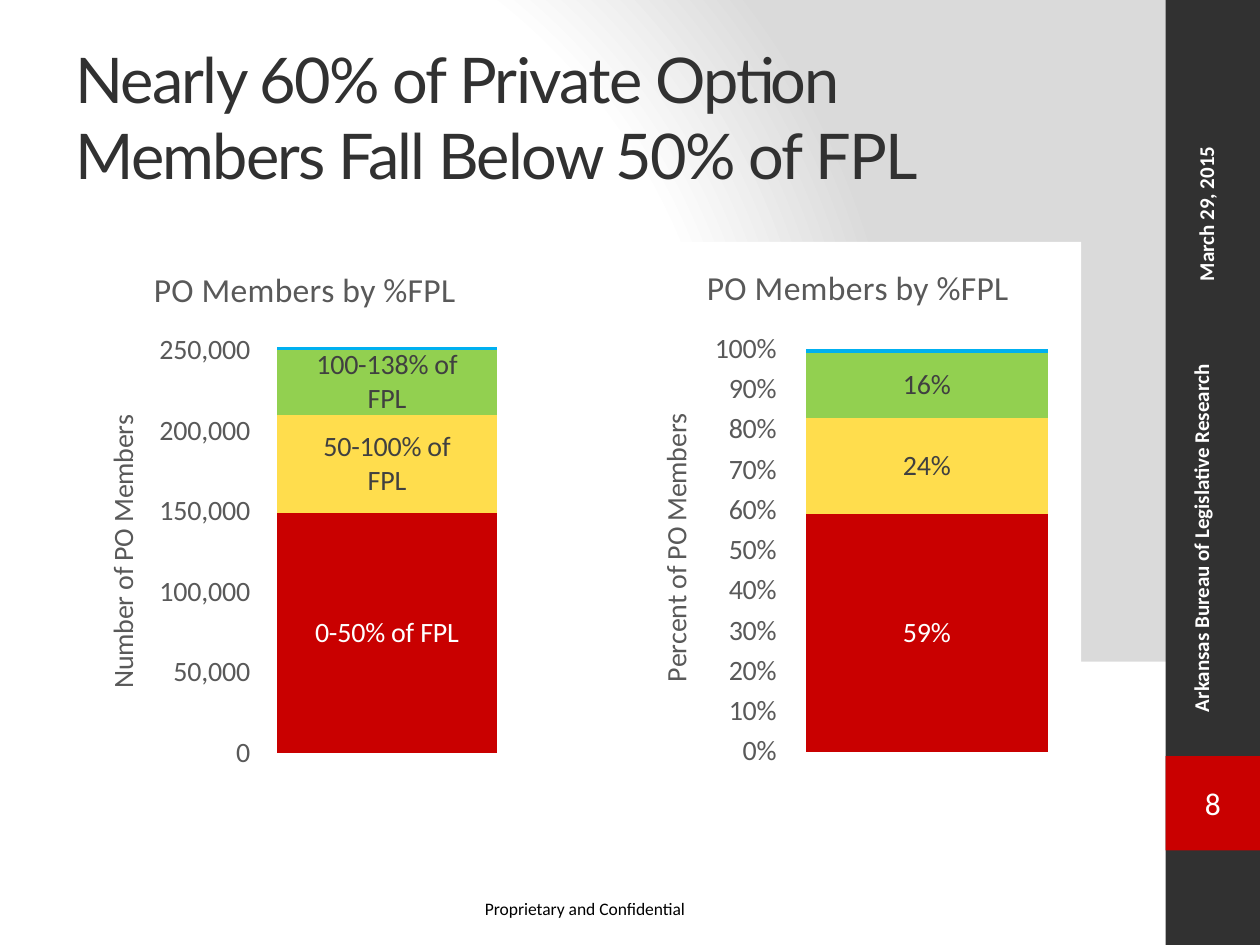
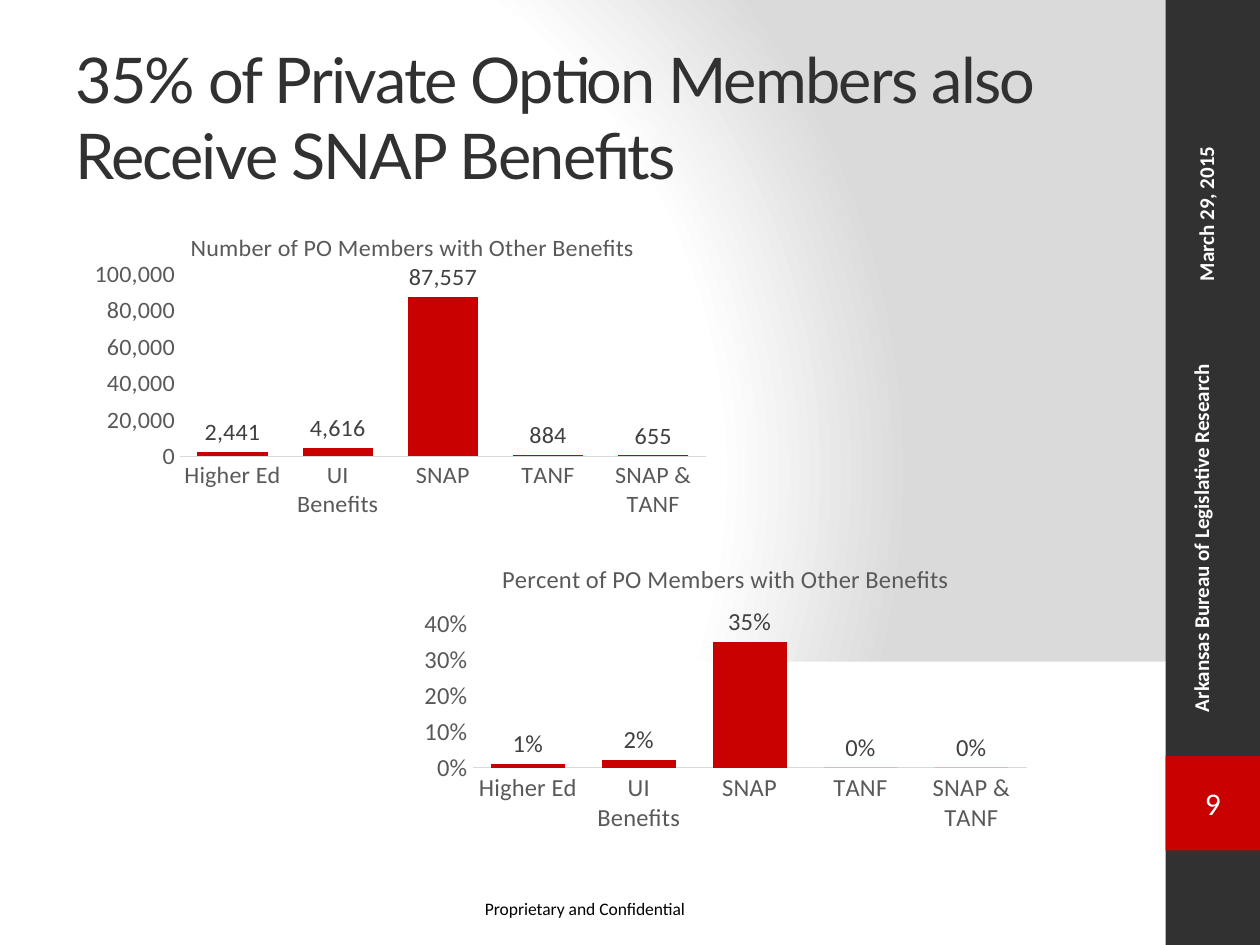
from dataclasses import dataclass

from pptx import Presentation
from pptx.chart.data import CategoryChartData
from pptx.dml.color import RGBColor
from pptx.enum.chart import XL_CHART_TYPE as ChartType
from pptx.enum.chart import XL_LABEL_POSITION as LabelPosition
from pptx.enum.chart import XL_TICK_MARK as TickMark
from pptx.enum.shapes import MSO_SHAPE as Shape
from pptx.enum.text import MSO_ANCHOR as Anchor
from pptx.enum.text import PP_ALIGN as Align
from pptx.oxml import parse_xml
from pptx.oxml.ns import nsdecls, qn
from pptx.util import Inches, Pt


@dataclass(frozen=True)
class Theme:
    body_font: str = "Calibri"
    title_font: str = "Lato"
    white: str = "FFFFFF"
    black: str = "000000"
    charcoal: str = "313131"
    shade: str = "DADADA"
    red: str = "C90000"
    yellow: str = "FFDD4D"
    green: str = "92D050"
    blue: str = "00B0F0"
    axis_text: str = "595959"
    label_text: str = "404040"
    axis_line: str = "D9D9D9"
    title_size: float = 36
    number_size: float = 18
    band_size: float = 12
    footer_size: float = 10
    stack_title_size: float = 19.2
    stack_size: float = 16
    column_size: float = 14


THEME = Theme()


@dataclass(frozen=True)
class Series:
    name: str
    values: tuple
    color: str
    label_color: str = ""


def style_font(font, size, color, name=THEME.body_font, bold=False):
    font.name = name
    font.size = Pt(size)
    font.bold = bold
    font.color.rgb = RGBColor.from_string(color)


def add_rect(page, box, color):
    rect = page.shapes.add_shape(Shape.RECTANGLE, *map(Inches, box))
    rect.shadow.inherit = False
    rect.fill.solid()
    rect.fill.fore_color.rgb = RGBColor.from_string(color)
    rect.line.fill.background()
    return rect


def add_text(page, box, text, size, color, wrap=True, upward=False, **font):
    frame = page.shapes.add_textbox(*map(Inches, box)).text_frame
    frame.word_wrap = wrap
    if upward:
        frame._txBody.bodyPr.set("vert", "vert270")
    para = frame.paragraphs[0]
    para.text = text
    style_font(para.font, size, color, **font)
    return frame


def paint_background(page):
    stops = ((0, THEME.white), (75, THEME.white), (100, THEME.shade))
    stop_xml = "".join(
        f'<a:gs pos="{place * 1000}"><a:srgbClr val="{color}"/></a:gs>'
        for place, color in stops
    )
    page._element.cSld.insert(0, parse_xml(
        f'<p:bg {nsdecls("p", "a")}><p:bgPr><a:gradFill rotWithShape="1">'
        f'<a:gsLst>{stop_xml}</a:gsLst><a:path path="circle">'
        '<a:fillToRect l="20000" t="50000" r="100000" b="50000"/></a:path>'
        '</a:gradFill><a:effectLst/></p:bgPr></p:bg>'
    ))


def add_side_band(page, box, number):
    left, top, width, height = box
    add_rect(page, box, THEME.charcoal)
    tile = add_rect(page, (left, top + 6, width, width), THEME.red)
    tile.text_frame.vertical_anchor = Anchor.MIDDLE
    para = tile.text_frame.paragraphs[0]
    para.text = str(number)
    para.alignment = Align.CENTER
    style_font(para.font, THEME.number_size, THEME.white)
    add_text(page, (left + 0.13, top + 2.33, 0.4, 3.42),
             "Arkansas Bureau of Legislative Research",
             THEME.band_size, THEME.white, upward=True, bold=True)
    add_text(page, (left + 0.17, top + 0.5, 0.61, 1.83), "March 29, 2015",
             THEME.band_size, THEME.white, upward=True, bold=True)


def add_page(deck, number, title):
    page = deck.slides.add_slide(deck.slide_layouts[6])
    paint_background(page)
    add_rect(page, (0, 5.25, 9.33, 2.25), THEME.white)
    add_side_band(page, (9.25, 0, 0.75, 7.5), number)
    add_text(page, (3.75, 7.08, 1.81, 0.27), "Proprietary and Confidential",
             THEME.footer_size, THEME.black, wrap=False)
    frame = add_text(page, (0.5, 0.3, 8.33, 1.25), title, THEME.title_size,
                     THEME.charcoal, name=THEME.title_font)
    frame.vertical_anchor = Anchor.MIDDLE
    frame.paragraphs[0].runs[0]._r.get_or_add_rPr().set("spc", "-100")
    return page


def set_layout(element, index, spot):
    for layout in element.findall(qn("c:layout")):
        element.remove(layout)
    target = '<c:layoutTarget val="inner"/>' if len(spot) == 4 else ""
    modes = '<c:xMode val="edge"/><c:yMode val="edge"/>'
    sizes = "".join(f'<c:{key} val="{value}"/>' for key, value in zip("xywh", spot))
    element.insert(index, parse_xml(
        f'<c:layout {nsdecls("c")}><c:manualLayout>{target}{modes}{sizes}'
        '</c:manualLayout></c:layout>'
    ))


def set_chart_title(title, text, size, spot):
    para = title.text_frame.paragraphs[0]
    para.text = text
    style_font(para.font, size, THEME.axis_text)
    set_layout(title._element, 1, spot)


def fill_chart(chart, color):
    fill = f'<a:solidFill><a:srgbClr val="{color}"/></a:solidFill>' if color else "<a:noFill/>"
    chart._chartSpace.find(qn("c:chart")).addnext(parse_xml(
        f'<c:spPr {nsdecls("c", "a")}>{fill}<a:ln><a:noFill/></a:ln></c:spPr>'
    ))


def add_column_chart(page, box, kind, categories, series, number_format, size,
                     top_value, step, gap, overlap, plot_area, back=None):
    data = CategoryChartData()
    data.categories = categories
    for item in series:
        data.add_series(item.name, item.values)
    chart = page.shapes.add_chart(kind, *map(Inches, box), data).chart
    chart.has_legend = False
    style_font(chart.font, size, THEME.black)
    fill_chart(chart, back)
    set_layout(chart._chartSpace.chart.plotArea, 0, plot_area)

    plot = chart.plots[0]
    plot.gap_width = gap
    plot.overlap = overlap
    plot.vary_by_categories = False
    for item, bars in zip(series, plot.series):
        bars.format.fill.solid()
        bars.format.fill.fore_color.rgb = RGBColor.from_string(item.color)
        if item.label_color:
            labels = bars.data_labels
            labels.show_value = True
            labels.number_format = number_format
            labels.number_format_is_linked = False
            style_font(labels.font, size, item.label_color)

    for axis in (chart.category_axis, chart.value_axis):
        axis.has_major_gridlines = False
        axis.major_tick_mark = axis.minor_tick_mark = TickMark.NONE
        style_font(axis.tick_labels.font, size, THEME.axis_text)
    line = chart.category_axis.format.line
    line.color.rgb = RGBColor.from_string(THEME.axis_line)
    line.width = Pt(0.75)
    scale = chart.value_axis
    scale.format.line.fill.background()
    scale.minimum_scale = 0
    scale.maximum_scale = top_value
    scale.major_unit = step
    scale.tick_labels.number_format = number_format
    scale.tick_labels.number_format_is_linked = False
    return chart


def add_member_stack(page, box, axis_title, names, values, label_by_name, **options):
    colors = (THEME.red, THEME.yellow, THEME.green, THEME.blue)
    label_colors = (THEME.white, THEME.label_text, THEME.label_text, "")
    series = [
        Series(name, (value,), color, label_color)
        for name, value, color, label_color in zip(names, values, colors, label_colors)
    ]
    chart = add_column_chart(page, box, ChartType.COLUMN_STACKED, ["1"], series,
                             size=THEME.stack_size, gap=20, overlap=100,
                             back=THEME.white, **options)
    chart.category_axis.visible = False
    set_chart_title(chart.chart_title, "PO Members by %FPL",
                    THEME.stack_title_size, (0.15, 0.03))
    title = chart.value_axis.axis_title
    set_chart_title(title, axis_title, THEME.stack_size, (0.04, 0.31))
    body = title.text_frame._txBody.bodyPr
    body.set("rot", "-5400000")
    body.set("vert", "horz")
    for bars in list(chart.plots[0].series)[:3]:
        bars.data_labels.position = LabelPosition.CENTER
        bars.data_labels.show_series_name = label_by_name
        bars.data_labels.show_value = not label_by_name


def add_benefit_columns(page, box, title, title_spot, values, **options):
    categories = ["Higher Ed", "UI Benefits", "SNAP", "TANF", "SNAP & TANF"]
    series = [Series("Series 1", values, THEME.red, THEME.label_text)]
    chart = add_column_chart(page, box, ChartType.COLUMN_CLUSTERED, categories, series,
                             size=THEME.column_size, gap=50, overlap=-27, **options)
    chart.plots[0].series[0].data_labels.position = LabelPosition.OUTSIDE_END
    set_chart_title(chart.chart_title, title, THEME.column_size, title_spot)


def add_poverty_page(deck):
    page = add_page(deck, 8, "Nearly 60% of Private Option Members Fall Below 50% of FPL")
    add_member_stack(
        page, (0.64, 1.93, 3.55, 4.26), "Number of PO Members",
        ("0-50% of FPL", "50-100% of FPL", "100-138% of FPL", "Series 4"),
        (149000, 61000, 40000, 2000), label_by_name=True, number_format="#,##0",
        top_value=260000, step=50000, plot_area=(0.39, 0.17, 0.59, 0.78))
    add_member_stack(
        page, (5.03, 1.92, 3.55, 4.26), "Percent of PO Members",
        [f"Series {index}" for index in range(1, 5)],
        (0.59, 0.24, 0.16, 0.01), label_by_name=False, number_format="0%",
        top_value=1, step=0.1, plot_area=(0.33, 0.2, 0.65, 0.75))


def add_benefits_page(deck):
    page = add_page(deck, 9, "35% of Private Option Members also Receive SNAP Benefits")
    add_benefit_columns(
        page, (0.75, 1.8, 5, 2.32), "Number of PO Members with Other Benefits",
        (0.13, 0), (2441, 4616, 87557, 884, 655), number_format="#,##0",
        top_value=100000, step=20000, plot_area=(0.12, 0.17, 0.85, 0.65))
    add_benefit_columns(
        page, (3.25, 4.33, 5, 2.32), "Percent of PO Members with Other Benefits",
        (0.14, 0.04), (0.01, 0.02, 0.35, 0, 0), number_format="0%",
        top_value=0.4, step=0.1, plot_area=(0.1, 0.27, 0.88, 0.49))


def main():
    deck = Presentation()
    deck.slide_width = Inches(10)
    deck.slide_height = Inches(7.5)
    add_poverty_page(deck)
    add_benefits_page(deck)
    deck.save("out.pptx")


if __name__ == "__main__":
    main()
